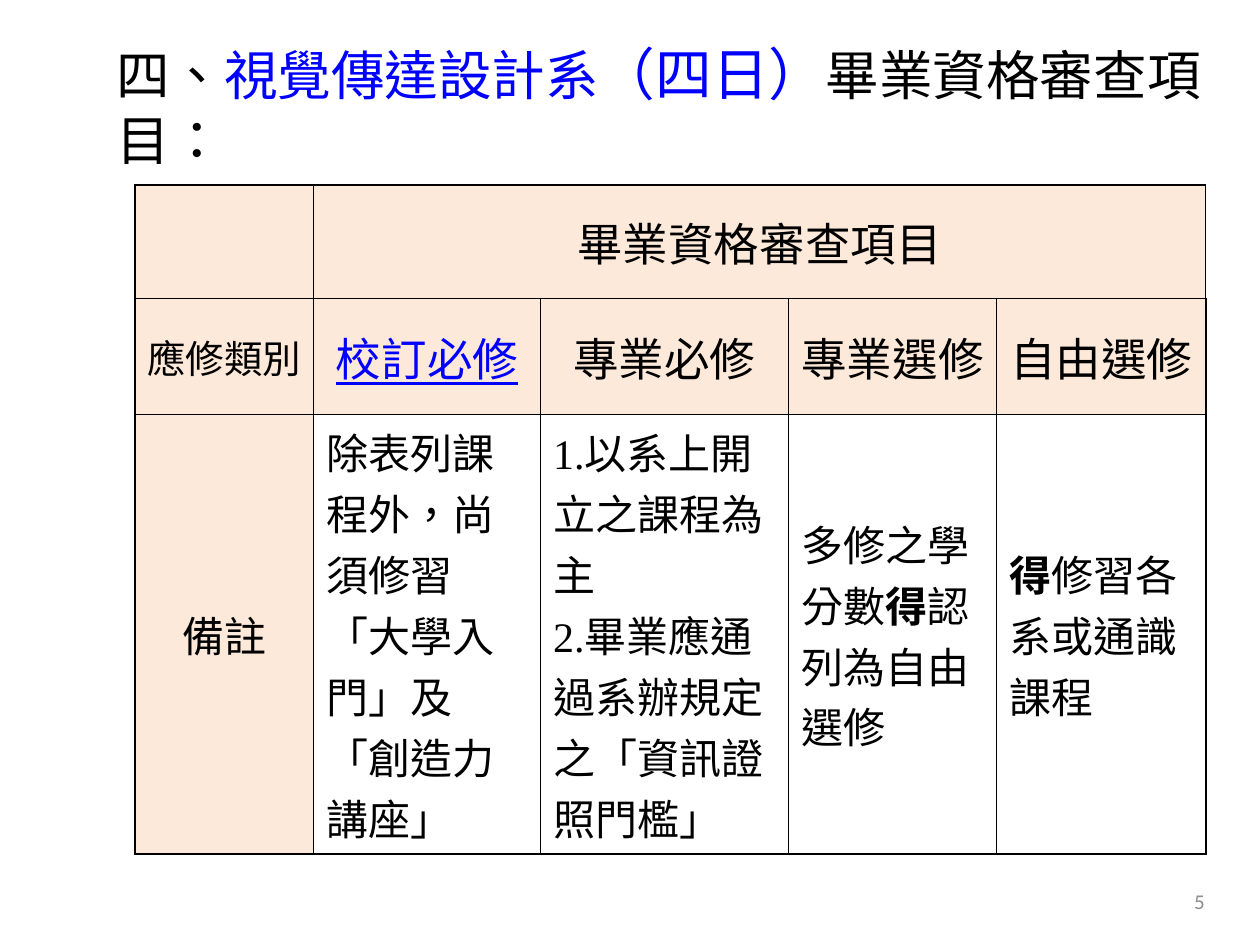
"""Build the slide on graduation review items for one department."""
from lxml import etree
from pptx import Presentation
from pptx.dml.color import RGBColor
from pptx.enum.lang import MSO_LANGUAGE_ID as LANG
from pptx.enum.text import MSO_ANCHOR as ANCHOR, PP_ALIGN as ALIGN
from pptx.oxml.ns import qn
from pptx.util import Inches, Pt

BLACK, BLUE, PEACH, GREY = "000000", "0000FF", "FDE9D9", "8C8C8C"
CJK = "Noto Sans CJK JP"


def rgb(color):
    return RGBColor.from_string(color)


def add_run(p, text, color=BLACK):
    r = p.add_run()
    r.text = text
    r.font.color.rgb = rgb(color)
    r.font.language_id = LANG.TRADITIONAL_CHINESE
    etree.SubElement(r.font._element, qn("a:ea"), typeface=CJK)
    return r


prs = Presentation()
prs.slide_width, prs.slide_height = Inches(10), Inches(7.5)
s = prs.slides.add_slide(prs.slide_layouts[6])

sp = s.shapes.add_textbox(Inches(7.33), Inches(6.95), Inches(2.33), Inches(0.4))
tf = sp.text_frame
tf.word_wrap = True
tf.vertical_anchor = ANCHOR.MIDDLE
p = tf.paragraphs[0]
p.text = "5"
p.alignment = ALIGN.RIGHT
p.font.size, p.font.name = Pt(12), "Calibri"
p.font.color.rgb = rgb(GREY)

widths = [1.42, 1.8, 1.97, 1.65, 1.66]
heights = [0.9, 0.92, 3.49]
rows = [
    ["", "畢業資格審查項目", "", "", ""],
    ["應修類別", "校訂必修", "專業必修", "專業選修", "自由選修"],
    ["備註",
     "除表列課程外，尚須修習「大學入門」及「創造力講座」",
     "1.以系上開立之課程為主\n2.畢業應通過系辦規定之「資訊證照門檻」",
     "多修之學分數*得*認列為自由選修",
     "*得*修習各系或通識課程"],
]
last_row, last_col = len(rows) - 1, len(widths) - 1
table = s.shapes.add_table(len(rows), len(widths), Inches(1.07), Inches(1.47),
                           Inches(sum(widths)), Inches(sum(heights))).table
for col, width in zip(table.columns, widths):
    col.width = Inches(width)
for row, height in zip(table.rows, heights):
    row.height = Inches(height)
table.cell(0, 1).merge(table.cell(0, last_col))

for i, texts in enumerate(rows):
    for j, text in enumerate(texts):
        cell = table.cell(i, j)
        cell.vertical_anchor = ANCHOR.MIDDLE
        header = i < last_row or j == 0
        if header:
            cell.margin_left = cell.margin_right = Inches(0.05)
        size = 24 if i == last_row else 22 if j == 0 else 26
        for n, line in enumerate(text.split("\n") if text else []):
            tf = cell.text_frame
            p = tf.add_paragraph() if n else tf.paragraphs[0]
            p.alignment = ALIGN.CENTER if header else ALIGN.LEFT
            p.font.size, p.font.name = Pt(size), "Times New Roman"
            for k, part in enumerate(line.split("*")):
                if part:
                    linked = part == "校訂必修"
                    r = add_run(p, part, BLUE if linked else BLACK)
                    r.font.bold = k % 2 == 1
                    r.font.underline = linked
        outer = {"L": j == 0, "R": j == last_col, "T": i == 0, "B": i == last_row}
        tcPr = cell._tc.get_or_add_tcPr()
        for side, thick in outer.items():
            ln = etree.SubElement(tcPr, qn("a:ln" + side), w=str(Pt(1.5 if thick else 1)))
            fill = etree.SubElement(ln, qn("a:solidFill"))
            etree.SubElement(fill, qn("a:srgbClr"), val=BLACK)
        if header:
            cell.fill.solid()
            cell.fill.fore_color.rgb = rgb(PEACH)
        else:
            cell.fill.background()

sp = s.shapes.add_textbox(Inches(0.83), Inches(0.29), Inches(8.83), Inches(1.09))
tf = sp.text_frame
tf.word_wrap = True
tf.vertical_anchor = ANCHOR.MIDDLE
p = tf.paragraphs[0]
p.font.name = CJK
for text, size, color in [("四、", 30.6, BLACK), ("視覺傳達設計系", 30.6, BLUE),
                          ("（四日）", 32.4, BLUE), ("畢業資格審查項目：", 30.6, BLACK)]:
    add_run(p, text, color).font.size = Pt(size)

prs.save("out.pptx")
